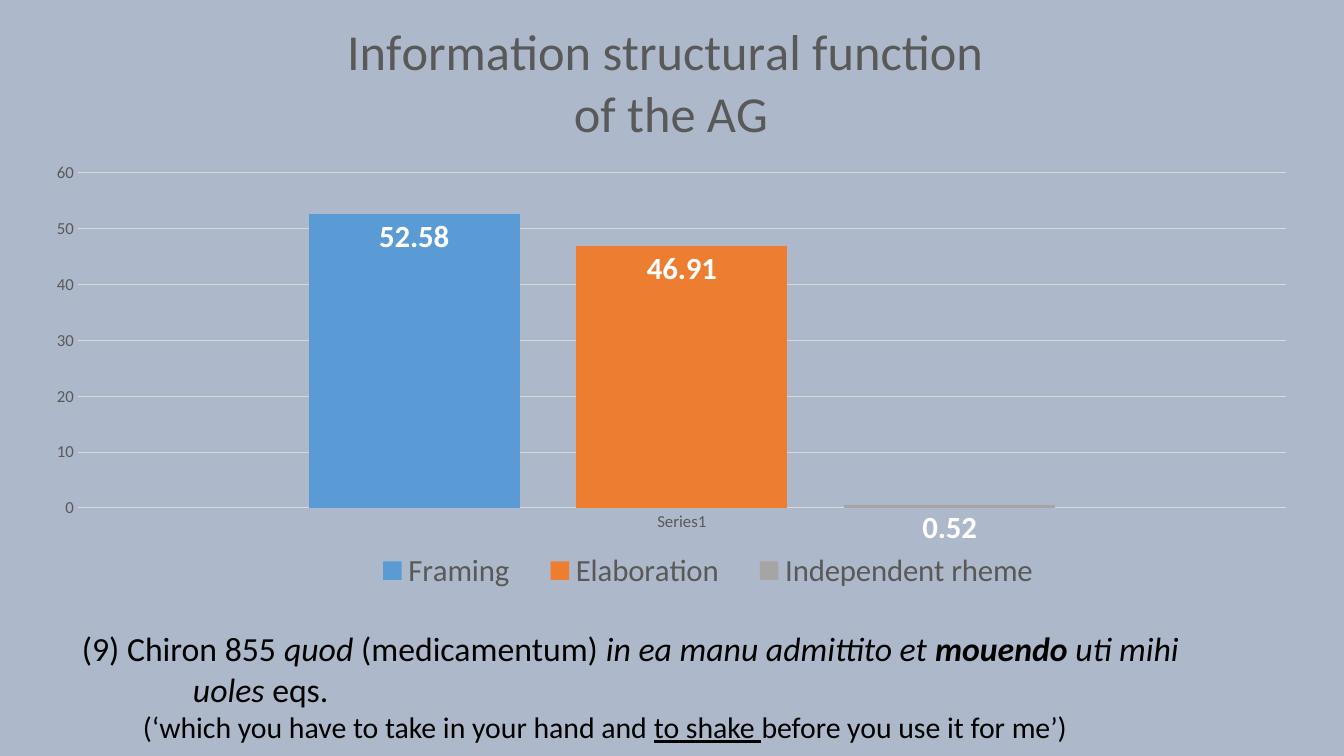
"""Build a slide with a column chart of functions of the AG and a Latin example."""
from lxml import etree
from pptx import Presentation
from pptx.chart.data import CategoryChartData
from pptx.dml.color import RGBColor
from pptx.enum.chart import (XL_CHART_TYPE, XL_LABEL_POSITION,
                             XL_LEGEND_POSITION, XL_TICK_MARK)
from pptx.oxml.ns import qn
from pptx.util import Emu, Pt

COLUMN = XL_CHART_TYPE.COLUMN_CLUSTERED
INSIDE = XL_LABEL_POSITION.INSIDE_END
BOTTOM = XL_LEGEND_POSITION.BOTTOM
NO_TICK = XL_TICK_MARK.NONE

FONT = "Calibri"
COLORS = {"back": "ADB9CA", "ink": "000000", "gray": "595959",
          "grid": "D9D9D9", "white": "FFFFFF"}
TITLE = ["Information structural function ", "of the AG"]
GROUP = "Series1"
BARS = [("Framing", 52.58, "5B9BD5"),
        ("Elaboration", 46.91, "ED7D31"),
        ("Independent rheme", 0.52, "A5A5A5")]
QUOTE = [("(9) Chiron 855 ", {}), ("quod ", {"italic": True}),
         ("(medicamentum) ", {}),
         ("in ea manu admittito et ", {"italic": True}),
         ("mouendo", {"italic": True, "bold": True}),
         (" uti mihi uoles ", {"italic": True}), ("eqs.", {})]
GLOSS = [("(‘which you have to take in your hand and ", {}),
         ("to shake ", {"underline": True}),
         ("before you use it for me’)", {})]
LINES = [(QUOTE, 24.1, 162, -111), (GLOSS, 21.3, 112, 0)]

SCALE = 9071
SLIDE = (1344, 756)
CHART = (31, 0, 1280, 602)
PLOT = (78, 173, 1208, 335)
LEGEND = (352, 552, 712, 40)
NOTE = (21, 623, 1322, 119)


def px(num):
    return Emu(num * SCALE)


def rgb(name):
    return RGBColor.from_string(COLORS.get(name, name))


def style(font, size, color="ink", **marks):
    font.name, font.size = FONT, Pt(size)
    font.color.rgb = rgb(color)
    for key, mark in marks.items():
        setattr(font, key, mark)


def write(para, text, size, color="ink", **marks):
    run = para.add_run()
    run.text = text
    style(run.font, size, color, **marks)


def rule(line):
    line.color.rgb = rgb("grid")
    line.width = Pt(0.75)


def place(part, box, inner=False):
    """Pin a chart part to a box given in slide px."""
    old = part.find(qn("c:layout"))
    if old is not None:
        part.remove(old)
    layout = etree.Element(qn("c:layout"))
    manual = etree.SubElement(layout, qn("c:manualLayout"))
    left, top, wide, high = CHART
    parts = [("x", (box[0] - left) / wide), ("y", (box[1] - top) / high),
             ("w", box[2] / wide), ("h", box[3] / high)]
    pairs = [("layoutTarget", "inner")] if inner else []
    pairs += [("xMode", "edge"), ("yMode", "edge")]
    pairs += [(key, f"{num:.4f}") for key, num in parts]
    for key, val in pairs:
        etree.SubElement(manual, qn("c:" + key)).set("val", val)
    if inner:
        part.insert(0, layout)
    else:
        part.find(qn("c:legendPos")).addnext(layout)


def draw_chart(slide):
    data = CategoryChartData()
    data.categories = [GROUP]
    for name, num, _ in BARS:
        data.add_series(name, [num])
    chart = slide.shapes.add_chart(COLUMN, *map(px, CHART), data).chart
    style(chart.font, 10)

    frame = chart.chart_title.text_frame
    for i, text in enumerate(TITLE):
        para = frame.add_paragraph() if i else frame.paragraphs[0]
        write(para, text, 36, "gray", bold=False)
    chart.chart_title.include_in_layout = False

    cats, vals = chart.category_axis, chart.value_axis
    for axis in (cats, vals):
        axis.major_tick_mark = axis.minor_tick_mark = NO_TICK
        style(axis.tick_labels.font, 12, "gray")
    rule(cats.format.line)
    vals.format.line.fill.background()
    vals.minimum_scale, vals.maximum_scale, vals.major_unit = 0, 60, 10
    rule(vals.major_gridlines.format.line)

    plot = chart.plots[0]
    plot.gap_width, plot.overlap = 219, -27
    plot.vary_by_categories = False
    for bar, (_, _, color) in zip(plot.series, BARS):
        bar.format.fill.solid()
        bar.format.fill.fore_color.rgb = rgb(color)
        bar.invert_if_negative = False
        labels = bar.data_labels
        labels.show_value, labels.position = True, INSIDE
        style(labels.font, 22, "white", bold=True)

    chart.has_legend = True
    legend = chart.legend
    legend.position, legend.include_in_layout = BOTTOM, False
    style(legend.font, 22, "gray")
    area = cats._element.getparent()
    place(area, PLOT, inner=True)
    place(legend._element, LEGEND)


def draw_note(slide):
    frame = slide.shapes.add_textbox(*map(px, NOTE)).text_frame
    frame.word_wrap = True
    frame.margin_right = px(120)
    for i, (runs, size, left, hang) in enumerate(LINES):
        para = frame.add_paragraph() if i else frame.paragraphs[0]
        props = para._p.get_or_add_pPr()
        props.set("marL", str(px(left)))
        props.set("indent", str(px(hang)))
        for text, marks in runs:
            write(para, text, size, **marks)


def main():
    deck = Presentation()
    deck.slide_width, deck.slide_height = map(px, SLIDE)
    slide = deck.slides.add_slide(deck.slide_layouts[6])
    fill = slide.background.fill
    fill.solid()
    fill.fore_color.rgb = rgb("back")
    draw_chart(slide)
    draw_note(slide)
    deck.save("out.pptx")


if __name__ == "__main__":
    main()
